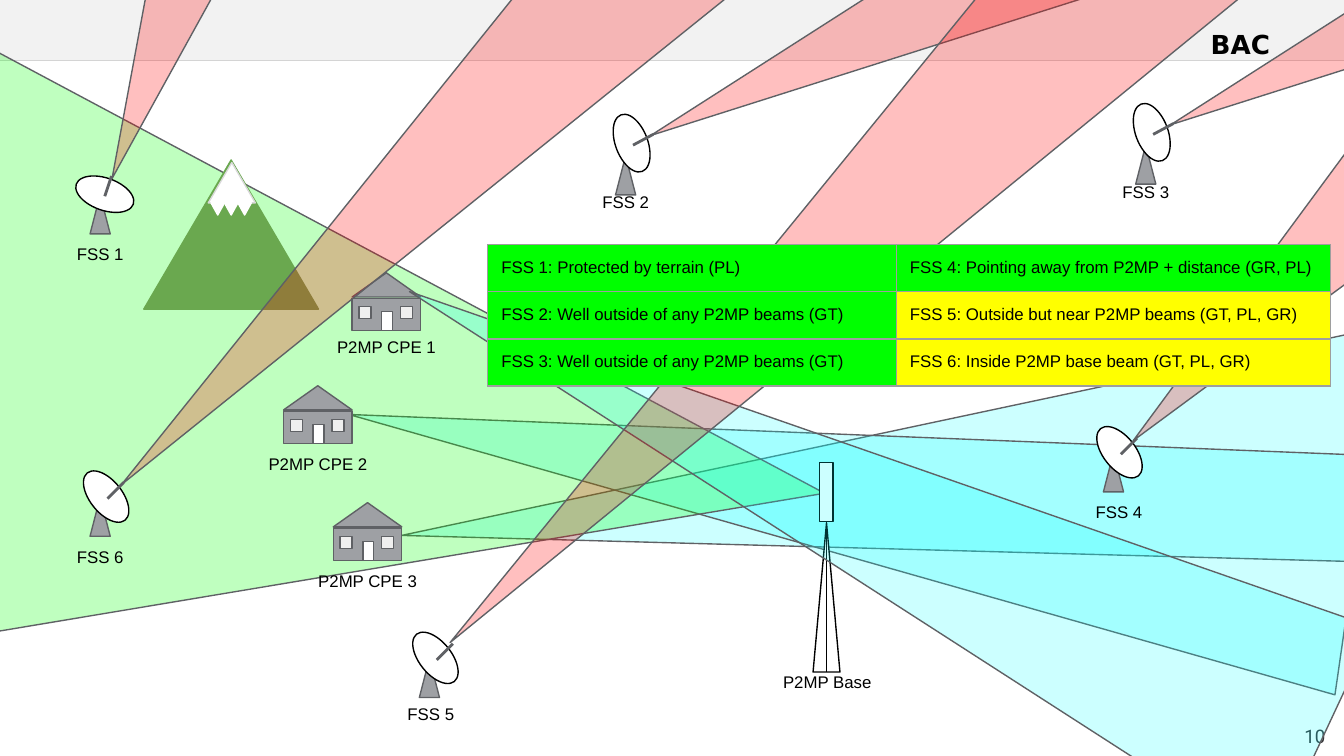
from dataclasses import dataclass

from lxml import etree
from pptx import Presentation
from pptx.dml.color import RGBColor
from pptx.enum.shapes import MSO_CONNECTOR, MSO_SHAPE
from pptx.enum.text import MSO_ANCHOR, PP_ALIGN
from pptx.oxml.ns import qn
from pptx.util import Emu, Pt

PX = 9144
TRIANGLE = MSO_SHAPE.ISOSCELES_TRIANGLE
RECTANGLE = MSO_SHAPE.RECTANGLE
ELLIPSE = MSO_SHAPE.OVAL
STRAIGHT = MSO_CONNECTOR.STRAIGHT
LEFT, CENTER, RIGHT = PP_ALIGN.LEFT, PP_ALIGN.CENTER, PP_ALIGN.RIGHT
TOP, MIDDLE = MSO_ANCHOR.TOP, MSO_ANCHOR.MIDDLE
BOTTOM_SITE = 2


@dataclass(frozen=True)
class Theme:
    black: str = "000000"
    white: str = "FFFFFF"
    header: str = "F2F2F2"
    header_rule: str = "D4D4D4"
    outline: str = "5F6165"
    metal: str = "9EA0A4"
    window: str = "EFEFEF"
    cpe_beam: str = "00FFFF"
    base_beam: str = "00FF00"
    fss_beam: str = "FF0000"
    mountain: str = "6AA84F"
    snow_line: str = "D9D9D9"
    page_number: str = "333336"
    safe: str = "00FF00"
    caution: str = "FFFF00"
    grid: str = "9E9E9E"
    font: str = "Arial"
    title_font: str = "DejaVu Sans"
    number_font: str = "Roboto"
    text_size: int = 9
    number_size: int = 10
    title_size: int = 14
    thin: float = 0.75
    rule: float = 1
    thick: float = 1.5


THEME = Theme()


@dataclass(frozen=True)
class Frame:
    left: int
    top: int
    width: int
    height: int


@dataclass(frozen=True)
class Beam:
    frame: Frame
    rotation: float
    color: str
    opacity: int
    apex: float = 0.5


@dataclass(frozen=True)
class Pose:
    rotation: float
    dish: tuple[int, int]
    feed: tuple[int, int, int, int]


@dataclass(frozen=True)
class Dish:
    left: int
    top: int
    pose: Pose


@dataclass(frozen=True)
class Label:
    text: str
    left: int
    top: int


@dataclass(frozen=True)
class Verdict:
    text: str
    color: str


def cpe_beam(left: int, top: int, rotation: float) -> Beam:
    return Beam(Frame(left, top, 180, 756), rotation, THEME.cpe_beam, 20, 0.566)


def fss_beam(left: int, top: int, width: int, height: int, rotation: float) -> Beam:
    return Beam(Frame(left, top, width, height), rotation, THEME.fss_beam, 25)


DIAGONAL = Pose(321.4, (0, -23), (13, 1, 25, -11))
LOW = Pose(339.5, (0, -32), (13, -8, 28, -16))
STEEP = Pose(289.4, (-1, -23), (11, 1, 16, -14))

REAR_BEAMS = [
    cpe_beam(586, -8, 263.9),
    cpe_beam(542, -4, 278.2),
    Beam(Frame(51, -25, 459, 675), 99.3, THEME.base_beam, 25),
]
MIDDLE_BEAMS = [
    cpe_beam(552, 10, 295.1),
    fss_beam(85, -107, 80, 247, 199.7),
    fss_beam(605, -167, 99, 376, 244.9),
    fss_beam(526, -168, 153, 757, 225),
    fss_beam(899, 93, 83, 275, 225),
]
FRONT_BEAMS = [
    fss_beam(232, -132, 125, 577, 225),
    fss_beam(992, -175, 99, 376, 244.9),
]
DISHES = [
    Dish(821, 337, DIAGONAL),
    Dish(312, 490, DIAGONAL),
    Dish(67, 370, DIAGONAL),
    Dish(458, 116, LOW),
    Dish(845, 108, LOW),
    Dish(67, 145, STEEP),
]
HOUSES = [(262, 222), (211, 306), (248, 393)]
LABELS = [
    Label("P2MP Base", 568, 492),
    Label("P2MP CPE 3", 226, 417),
    Label("P2MP CPE 2", 189, 330),
    Label("P2MP CPE 1", 240, 243),
    Label("FSS 6", 27, 399),
    Label("FSS 1", 27, 174),
    Label("FSS 2", 418, 135),
    Label("FSS 5", 273, 516),
    Label("FSS 4", 785, 366),
    Label("FSS 3", 805, 128),
]
VERDICTS = [
    [Verdict("FSS 1: Protected by terrain (PL)", THEME.safe),
     Verdict("FSS 4: Pointing away from P2MP + distance (GR, PL)", THEME.safe)],
    [Verdict("FSS 2: Well outside of any P2MP beams (GT)", THEME.safe),
     Verdict("FSS 5: Outside but near P2MP beams (GT, PL, GR)", THEME.caution)],
    [Verdict("FSS 3: Well outside of any P2MP beams (GT)", THEME.safe),
     Verdict("FSS 6: Inside P2MP base beam (GT, PL, GR)", THEME.caution)],
]


def px(length: int) -> Emu:
    return Emu(length * PX)


def add_figure(page, kind, frame: Frame, fill: str, line: str | None = THEME.outline,
               rotation: float = 0):
    shape = page.shapes.add_shape(
        kind, px(frame.left), px(frame.top), px(frame.width), px(frame.height))
    shape.shadow.inherit = False
    shape.rotation = rotation
    shape.fill.solid()
    shape.fill.fore_color.rgb = RGBColor.from_string(fill)
    if line is None:
        shape.line.fill.background()
    else:
        shape.line.color.rgb = RGBColor.from_string(line)
        shape.line.width = Pt(THEME.thin)
    return shape


def add_line(page, start: tuple[int, int], end: tuple[int, int], color: str, width: float):
    line = page.shapes.add_connector(STRAIGHT, *map(px, (*start, *end)))
    line.line.color.rgb = RGBColor.from_string(color)
    line.line.width = Pt(width)
    etree.SubElement(line.element.spPr, qn("a:effectLst"))
    return line


def add_span(para, text: str, size: int = THEME.text_size, font: str = THEME.font,
             color: str = THEME.black, bold: bool = False) -> None:
    span = para.add_run()
    span.text = text
    span.font.size = Pt(size)
    span.font.name = font
    span.font.bold = bold
    span.font.color.rgb = RGBColor.from_string(color)


def add_text_box(page, frame: Frame, align, anchor=TOP):
    box = page.shapes.add_textbox(
        px(frame.left), px(frame.top), px(frame.width), px(frame.height))
    text = box.text_frame
    text.word_wrap = True
    text.vertical_anchor = anchor
    text.margin_left = text.margin_right = text.margin_top = text.margin_bottom = px(10)
    para = text.paragraphs[0]
    para.alignment = align
    return para


def draw_beam(page, beam: Beam) -> None:
    shape = add_figure(page, TRIANGLE, beam.frame, beam.color, rotation=beam.rotation)
    shape.adjustments[0] = beam.apex
    color = shape.element.spPr.find(qn("a:solidFill")).find(qn("a:srgbClr"))
    etree.SubElement(color, qn("a:alpha")).set("val", str(beam.opacity * 1000))


def draw_dish(page, dish: Dish) -> None:
    x, y, pose = dish.left, dish.top, dish.pose
    add_figure(page, TRIANGLE, Frame(x, y, 15, 29), THEME.metal)
    add_figure(page, ELLIPSE, Frame(x + pose.dish[0], y + pose.dish[1], 24, 45),
               THEME.white, THEME.black, pose.rotation)
    x1, y1, x2, y2 = pose.feed
    add_line(page, (x + x1, y + y1), (x + x2, y + y2), THEME.outline, THEME.thick)


def draw_house(page, left: int, top: int) -> None:
    add_figure(page, RECTANGLE, Frame(left, top, 51, 24), THEME.metal)
    add_figure(page, TRIANGLE, Frame(left, top - 19, 51, 18), THEME.metal)
    add_figure(page, RECTANGLE, Frame(left + 22, top + 10, 8, 14), THEME.white)
    for offset in (5, 36):
        add_figure(page, RECTANGLE, Frame(left + offset, top + 6, 9, 9), THEME.window)


def draw_tower(page) -> None:
    add_figure(page, TRIANGLE, Frame(605, 389, 20, 111), THEME.white, THEME.black)
    radio = add_figure(page, RECTANGLE, Frame(610, 344, 10, 44), THEME.white, THEME.black)
    pole = add_line(page, (615, 388), (615, 500), THEME.black, THEME.thin)
    pole.begin_connect(radio, BOTTOM_SITE)


def draw_mountain(page) -> None:
    add_figure(page, TRIANGLE, Frame(107, 119, 130, 111), THEME.mountain, THEME.mountain)
    add_figure(page, TRIANGLE, Frame(155, 121, 35, 30), THEME.white, THEME.snow_line)
    for tooth in range(3):
        add_figure(page, TRIANGLE, Frame(157 + 10 * tooth, 151, 10, 9),
                   THEME.white, THEME.white, 180)


def add_border(cell) -> None:
    properties = cell._tc.get_or_add_tcPr()
    for index, side in enumerate(("a:lnL", "a:lnR", "a:lnT", "a:lnB")):
        line = etree.Element(qn(side), w=str(Pt(THEME.thin)))
        fill = etree.SubElement(line, qn("a:solidFill"))
        etree.SubElement(fill, qn("a:srgbClr"), val=THEME.grid)
        properties.insert(index, line)


def draw_verdicts(page) -> None:
    widths, row_height = (304, 323), 34
    table = page.shapes.add_table(
        len(VERDICTS), len(widths), px(363), px(182),
        px(sum(widths)), px(row_height * len(VERDICTS))).table
    for column, width in zip(table.columns, widths):
        column.width = px(width)
    for row, verdicts in zip(table.rows, VERDICTS):
        row.height = px(row_height)
        for cell, verdict in zip(row.cells, verdicts):
            cell.margin_left = cell.margin_right = px(10)
            cell.margin_top = cell.margin_bottom = px(10)
            cell.fill.solid()
            cell.fill.fore_color.rgb = RGBColor.from_string(verdict.color)
            add_border(cell)
            add_span(cell.text_frame.paragraphs[0], verdict.text)


def draw_header(page) -> None:
    add_figure(page, RECTANGLE, Frame(0, 0, 1000, 45), THEME.header, None)
    add_line(page, (0, 45), (1000, 45), THEME.header_rule, THEME.rule)
    add_span(add_text_box(page, Frame(891, 11, 66, 45), LEFT), "BAC",
             THEME.title_size, THEME.title_font, bold=True)


def main() -> None:
    deck = Presentation()
    deck.slide_width = px(1000)
    deck.slide_height = Emu(deck.slide_width * 9 // 16)
    page = deck.slides.add_slide(deck.slide_layouts[6])
    draw_header(page)
    for beam in REAR_BEAMS:
        draw_beam(page, beam)
    add_span(add_text_box(page, Frame(936, 533, 60, 30), RIGHT, MIDDLE), "10",
             THEME.number_size, THEME.number_font, THEME.page_number)
    for dish in DISHES:
        draw_dish(page, dish)
    for left, top in HOUSES:
        draw_house(page, left, top)
    draw_tower(page)
    for beam in MIDDLE_BEAMS:
        draw_beam(page, beam)
    draw_mountain(page)
    for beam in FRONT_BEAMS:
        draw_beam(page, beam)
    for label in LABELS:
        add_span(add_text_box(page, Frame(label.left, label.top, 95, 30), CENTER), label.text)
    draw_verdicts(page)
    deck.save("out.pptx")


if __name__ == "__main__":
    main()
